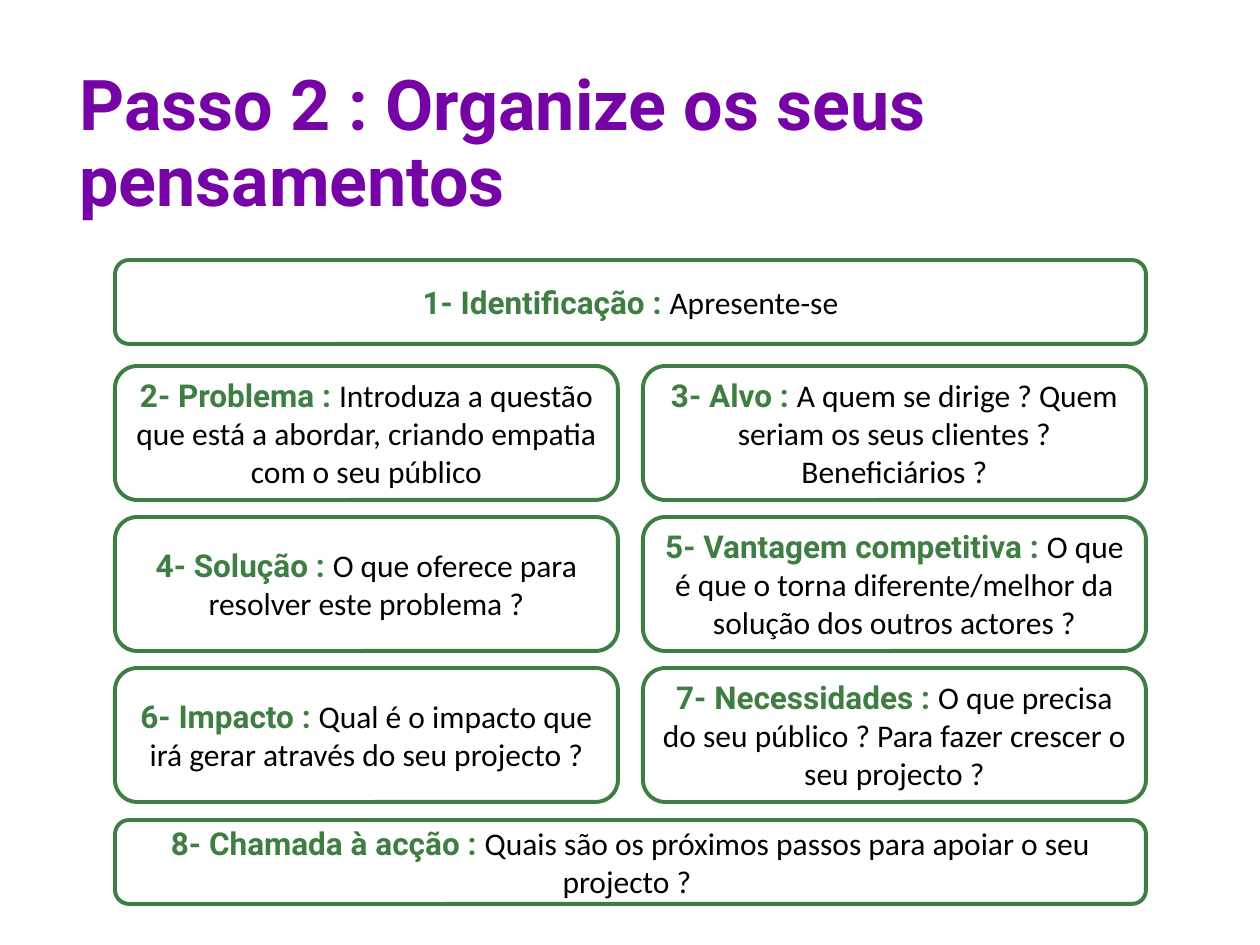
import dataclasses

import pptx
import pptx.dml.color
import pptx.enum.shapes
import pptx.enum.text
import pptx.util

EMU_PER_PX = 914400 // 126


@dataclasses.dataclass(frozen=True)
class Theme:
    purple: str = "7503A6"
    green: str = "3F7E43"
    black: str = "000000"
    heading_font: str = "Roboto"
    body_font: str = "Calibri"
    title_size: int = 40
    body_size: int = 18
    border: float = 2.25


@dataclasses.dataclass(frozen=True)
class Box:
    left: int
    top: int
    width: int
    height: int

    def emu(self):
        return [pptx.util.Emu(length * EMU_PER_PX)
                for length in (self.left, self.top, self.width, self.height)]


THEME = Theme()
ALIGN = pptx.enum.text.PP_ALIGN
ANCHOR = pptx.enum.text.MSO_ANCHOR

TITLE = "Passo 2 : Organize os seus pensamentos"
OPENING = ("1- Identificação : ", "Apresente-se")
STEPS = [
    ("2- Problema : ",
     "Introduza a questão que está a abordar, criando empatia com o seu público"),
    ("3- Alvo : ",
     "A quem se dirige ? Quem seriam os seus clientes ? Beneficiários ?"),
    ("4- Solução : ", "O que oferece para resolver este problema ?"),
    ("5- Vantagem competitiva : ",
     "O que é que o torna diferente/melhor da solução dos outros actores ?"),
    ("6- Impacto : ", "Qual é o impacto que irá gerar através do seu projecto ?"),
    ("7- Necessidades : ",
     "O que precisa do seu público ? Para fazer crescer o seu projecto ?"),
]
CLOSING = ("8- Chamada à acção : ",
           "Quais são os próximos passos para apoiar o seu projecto ? ")


def add_text(paragraph, text, *, font, size, color, bold=False):
    run = paragraph.add_run()
    run.text = text
    run.font.name = font
    run.font.size = pptx.util.Pt(size)
    run.font.bold = bold
    run.font.color.rgb = pptx.dml.color.RGBColor.from_string(color)


def add_title(slide, box, text):
    frame = slide.shapes.add_textbox(*box.emu()).text_frame
    frame.word_wrap = True
    frame.vertical_anchor = ANCHOR.TOP
    paragraph = frame.paragraphs[0]
    paragraph.alignment = ALIGN.LEFT
    paragraph.line_spacing = 0.9
    add_text(paragraph, text, font=THEME.heading_font, size=THEME.title_size,
             color=THEME.purple, bold=True)


def add_step(slide, box, step):
    """Add a rounded frame holding a bold label and its explanation."""
    label, explanation = step
    shape = slide.shapes.add_shape(
        pptx.enum.shapes.MSO_SHAPE.ROUNDED_RECTANGLE, *box.emu())
    shape.shadow.inherit = False
    shape.fill.background()
    shape.line.color.rgb = pptx.dml.color.RGBColor.from_string(THEME.green)
    shape.line.width = pptx.util.Pt(THEME.border)
    frame = shape.text_frame
    frame.word_wrap = True
    frame.vertical_anchor = ANCHOR.MIDDLE
    paragraph = frame.paragraphs[0]
    paragraph.alignment = ALIGN.CENTER
    add_text(paragraph, label, font=THEME.heading_font, size=THEME.body_size,
             color=THEME.green, bold=True)
    add_text(paragraph, explanation, font=THEME.body_font,
             size=THEME.body_size, color=THEME.black)


def add_step_grid(slide, box, steps, columns=2, column_gap=25, row_gap=17):
    """Fill the box row by row with equal step frames."""
    rows = len(steps) // columns
    width = (box.width - (columns - 1) * column_gap) // columns
    height = (box.height - (rows - 1) * row_gap) // rows
    for index, step in enumerate(steps):
        row, column = divmod(index, columns)
        cell = Box(box.left + column * (width + column_gap),
                   box.top + row * (height + row_gap), width, height)
        add_step(slide, cell, step)


def add_pitch_plan(slide, box):
    """Stack the opening banner, the step grid and the closing banner."""
    banner_height = 84
    grid_top, grid_height = 106, 436
    add_step(slide, Box(box.left, box.top, box.width, banner_height), OPENING)
    add_step_grid(slide, Box(box.left, box.top + grid_top, box.width, grid_height), STEPS)
    closing_top = box.top + box.height - banner_height
    add_step(slide, Box(box.left, closing_top, box.width, banner_height), CLOSING)


def main():
    presentation = pptx.Presentation()
    presentation.slide_width = pptx.util.Inches(10)
    presentation.slide_height = pptx.util.Inches(7.5)
    slide = presentation.slides.add_slide(presentation.slide_layouts[6])
    add_title(slide, Box(67, 64, 896, 183), TITLE)
    add_pitch_plan(slide, Box(115, 260, 1031, 644))
    presentation.save("out.pptx")


if __name__ == "__main__":
    main()
